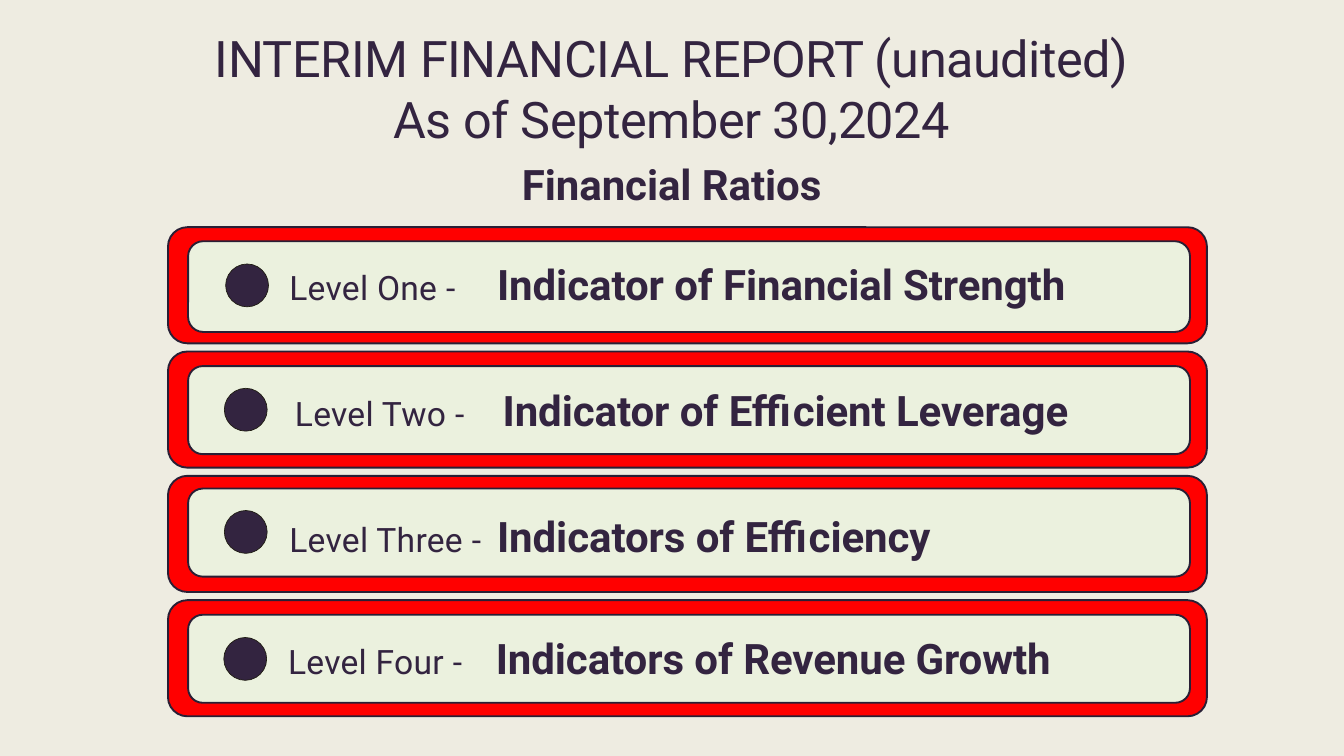
from lxml import etree
from pptx import Presentation
from pptx.dml.color import RGBColor
from pptx.enum.shapes import MSO_SHAPE
from pptx.enum.text import MSO_ANCHOR, MSO_AUTO_SIZE, PP_ALIGN
from pptx.oxml.ns import qn
from pptx.util import Cm, Pt

ROUNDED, OVAL = MSO_SHAPE.ROUNDED_RECTANGLE, MSO_SHAPE.OVAL
TOP, CENTER = MSO_ANCHOR.TOP, PP_ALIGN.CENTER
NO_FIT, GROW = MSO_AUTO_SIZE.NONE, MSO_AUTO_SIZE.SHAPE_TO_FIT_TEXT
FONT, INK = "Roboto", "332440"


def add_panel(kind, box, fill, line, weight):
    """Add a filled, outlined shape; box is left, top, width, height in cm."""
    sp = s.shapes.add_shape(kind, *map(Cm, box))
    sp.shadow.inherit = False
    sp.fill.solid()
    sp.fill.fore_color.rgb = RGBColor.from_string(fill)
    sp.line.color.rgb = RGBColor.from_string(line)
    sp.line.width = Pt(weight)


def add_run(p, text, size, spacing, bold=False):
    """Add a run with letter spacing in hundredths of a point."""
    r = p.add_run()
    r.text = text
    r.font.size, r.font.bold = Pt(size), bold
    r.font.name = FONT
    r.font.color.rgb = RGBColor.from_string(INK)
    r._r.get_or_add_rPr().set("spc", str(spacing))


prs = Presentation()
prs.slide_width, prs.slide_height = Cm(50.8), Cm(28.58)
s = prs.slides.add_slide(prs.slide_layouts[5])
s.background.fill.solid()
s.background.fill.fore_color.rgb = RGBColor.from_string("EEECE1")

# Title
title = s.shapes.title
title.left, title.top, title.width, title.height = Cm(6.35), Cm(1.04), Cm(38.07), Cm(6.96)
tf = title.text_frame
tf.word_wrap, tf.auto_size, tf.vertical_anchor = True, NO_FIT, TOP
tf.margin_left = tf.margin_top = tf.margin_right = tf.margin_bottom = 0
p = tf.paragraphs[0]
p.alignment, p.space_before = CENTER, Pt(4)
add_run(p, "INTERIM FINANCIAL REPORT (unaudited)", 54, -50)
p.add_line_break()
add_run(p, "As of September 30,2024", 54, -50)
p = tf.add_paragraph()
p.alignment, p.space_before = CENTER, Pt(11)
add_run(p, "Financial Ratios", 45, -10, bold=True)

# Levels: label, indicator, card top and height, dot left and top, text left, top and width
levels = [
    ("Level One", "Indicator of Financial Strength", 9.12, 3.43, 8.53, 9.98, 10.69, 9.63, 33.88),
    ("Level Two", "Indicator of Efficient Leverage", 13.84, 3.33, 8.48, 14.68, 10.9, 14.4, 31.42),
    ("Level Three", "Indicators of Efficiency", 18.47, 3.33, 8.48, 19.3, 10.69, 19.18, 34.29),
    ("Level Four", "Indicators of Revenue Growth", 23.24, 3.33, 8.46, 24.1, 10.64, 23.77, 33.93),
]
for i, (label, indicator, card_top, card_h, dot_x, dot_y, x, y, w) in enumerate(levels):
    add_panel(ROUNDED, (6.35, 8.59 + 4.7 * i, 39.27, 4.39), "FF0000", "291F35", 2)
    add_panel(ROUNDED, (7.11, card_top, 37.87, card_h), "EBF1DE", "291F35", 2)
    add_panel(OVAL, (dot_x, dot_y, 1.62, 1.62), INK, "1E1C11", 0.75)

    tf = s.shapes.add_textbox(Cm(x), Cm(y), Cm(w), Cm(2.18)).text_frame
    tf.word_wrap, tf.auto_size = True, GROW
    p = tf.paragraphs[0]
    p.space_before = Pt(5.8)
    tabs = etree.SubElement(p._p.get_or_add_pPr(), qn("a:tabLst"))
    etree.SubElement(tabs, qn("a:tab"), pos=str(Cm(7.85)), algn="l")
    add_run(p, label + " ", 36, 30)
    add_run(p, "-\t", 36, 0)
    add_run(p, indicator, 45, -10, bold=True)

prs.save("out.pptx")
